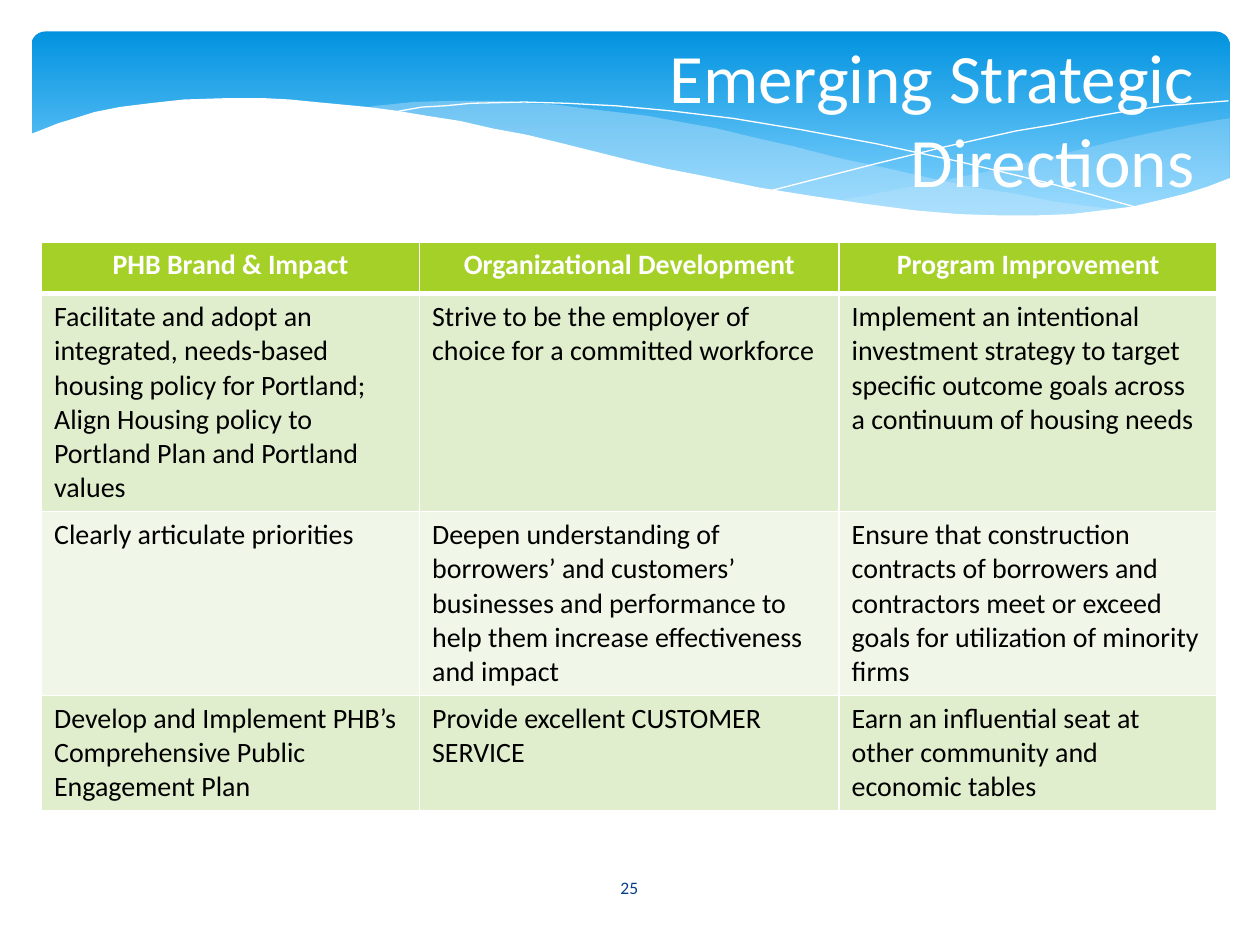
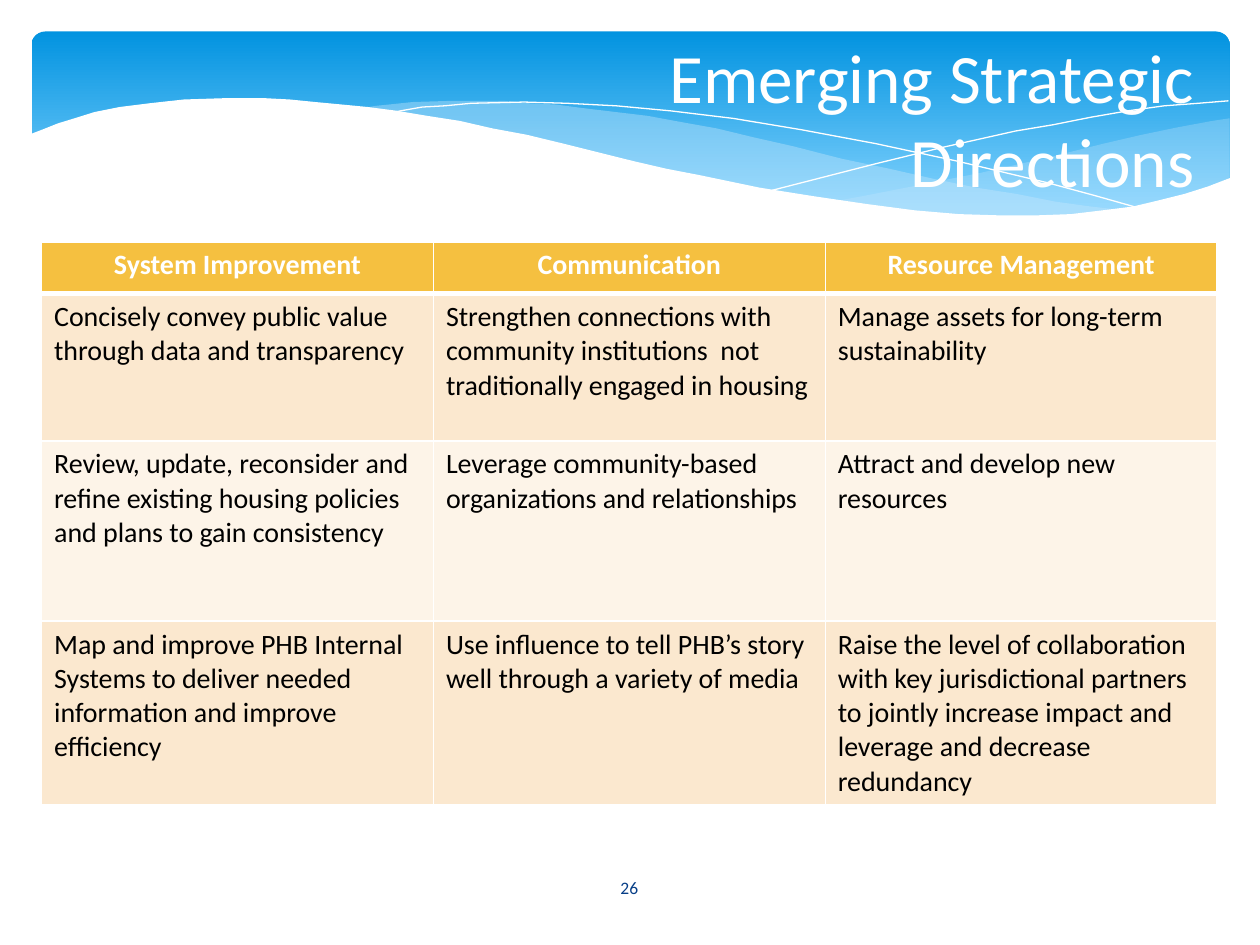
from lxml import etree
from pptx import Presentation
from pptx.dml.color import RGBColor
from pptx.enum import shapes, text
from pptx.oxml.ns import qn
from pptx.util import Inches, Pt

FONT = "Calibri"
TITLE = "Emerging Strategic Directions"
COLORS = {
    "white": "FFFFFF",
    "black": "000000",
    "band_top": "0293E0",
    "band_bottom": "83D3FE",
    "ripple": "C6E7FC",
    "number": "073E87",
}
GREEN = {"header": "A5D028", "odd": "E1EECD", "even": "F0F7E8"}
AMBER = {"header": "F5C040", "odd": "FBE8CF", "even": "FDF4E8"}

# Outlines of the header band, in hundredths of an inch
RIGHT_RIPPLE = [
    (975, 94), (962, 96), (935, 101), (906, 107), (876, 114), (832, 125),
    (779, 137), (729, 147), (683, 156), (661, 160), (691, 164), (718, 167),
    (745, 169), (769, 171), (792, 172), (835, 172), (863, 170), (889, 166),
    (913, 162), (935, 156), (949, 152), (963, 147), (976, 141), (976, 94),
]
LONG_RIPPLE = [
    (893, 167), (866, 164), (837, 160), (807, 154), (775, 149), (741, 142),
    (706, 134), (668, 126), (629, 116), (598, 109), (569, 102), (541, 97),
    (514, 92), (489, 89), (464, 86), (441, 83), (420, 82), (399, 80),
    (361, 80), (328, 81), (299, 84), (286, 86), (323, 90), (362, 97),
    (404, 106), (449, 116), (491, 126), (530, 135), (566, 143), (601, 150),
    (634, 156), (665, 161), (695, 165), (722, 168), (748, 170), (773, 172),
    (796, 173), (828, 173), (857, 171), (876, 169),
]
FALLING_LINE = [
    (309, 90), (318, 88), (335, 85), (353, 84), (374, 82), (416, 81),
    (450, 82), (489, 84), (532, 88), (582, 94), (636, 103), (695, 114),
    (760, 128), (831, 145), (868, 155), (907, 166),
]
RISING_LINE = [
    (613, 151), (652, 141), (695, 130), (748, 117), (806, 104), (836, 99),
    (866, 93), (895, 88), (924, 84), (951, 82), (975, 80),
]
WHITE_WAVE = [
    (977, 141), (959, 148), (940, 154), (920, 159), (899, 164), (875, 167),
    (850, 170), (823, 171), (793, 171), (761, 170), (726, 167), (688, 162),
    (647, 156), (603, 149), (579, 144), (555, 139), (529, 134), (503, 128),
    (475, 121), (447, 114), (418, 107), (391, 102), (365, 96), (339, 92),
    (315, 88), (292, 85), (271, 83), (250, 81), (230, 79), (211, 78),
    (177, 78), (146, 79), (119, 82), (95, 85), (75, 89), (59, 94),
    (46, 98), (36, 102), (23, 107), (23, 224), (977, 224),
]

STRATEGY = [
    ["PHB Brand & Impact", "Organizational Development", "Program Improvement"],
    ["Facilitate and adopt an integrated, needs-based housing policy for Portland; "
     "Align Housing policy to Portland Plan and Portland values",
     "Strive to be the employer of choice for a committed workforce",
     "Implement an intentional investment strategy to target specific outcome goals "
     "across a continuum of housing needs"],
    ["Clearly articulate priorities",
     "Deepen understanding of borrowers’ and customers’ businesses and performance "
     "to help them increase effectiveness and impact",
     "Ensure that construction contracts of borrowers and contractors meet or exceed "
     "goals for utilization of minority firms"],
    ["Develop and Implement PHB’s Comprehensive Public Engagement Plan",
     "Provide excellent CUSTOMER SERVICE",
     "Earn an influential seat at other community and economic tables"],
]
OPERATIONS = [
    ["System Improvement", "Communication", "Resource Management"],
    ["Concisely convey public value through data and transparency",
     "Strengthen connections with community institutions  not traditionally engaged "
     "in housing",
     "Manage assets for long-term sustainability"],
    ["Review, update, reconsider and refine existing housing policies and plans to "
     "gain consistency",
     "Leverage community-based organizations and relationships",
     "Attract and develop new resources"],
    ["Map and improve PHB Internal Systems to deliver needed information and improve "
     "efficiency",
     "Use influence to tell PHB’s story well through a variety of media",
     "Raise the level of collaboration with key jurisdictional partners to jointly "
     "increase impact and leverage and decrease redundancy"],
]


def rgb(name):
    return RGBColor.from_string(COLORS[name])


def write(frame, words, size, color, align, bold=False):
    frame.text = words
    frame.word_wrap = True
    paragraph = frame.paragraphs[0]
    paragraph.alignment = align
    font = paragraph.runs[0].font
    font.name, font.size, font.bold = FONT, Pt(size), bold
    font.color.rgb = rgb(color)


def add_outline(slide, points, closed):
    builder = slide.shapes.build_freeform(*points[0], scale=Inches(0.01))
    builder.add_line_segments(points[1:], close=closed)
    outline = builder.convert_to_shape()
    outline.shadow.inherit = False
    return outline


def add_area(slide, points, color, opacity=100):
    area = add_outline(slide, points, True)
    area.line.fill.background()
    area.fill.solid()
    area.fill.fore_color.rgb = rgb(color)
    if opacity < 100:
        tint = area.element.spPr.find(qn("a:solidFill")).find(qn("a:srgbClr"))
        etree.SubElement(tint, qn("a:alpha"), val=str(opacity * 1000))


def add_hairline(slide, points):
    hairline = add_outline(slide, points, False)
    hairline.fill.background()
    hairline.line.color.rgb = rgb("white")
    hairline.line.width = 0


def add_header_band(slide):
    band = slide.shapes.add_shape(
        shapes.MSO_SHAPE.ROUNDED_RECTANGLE,
        Inches(0.25), Inches(0.25), Inches(9.51), Inches(1.56))
    band.adjustments[0] = 0.07
    band.shadow.inherit = False
    band.line.fill.background()
    band.fill.gradient()
    band.fill.gradient_angle = 270
    stops = zip(band.fill.gradient_stops, ("band_top", "band_bottom"), (0, 0.9))
    for stop, color, position in stops:
        stop.color.rgb = rgb(color)
        stop.position = position

    add_area(slide, RIGHT_RIPPLE, "ripple", 29)
    add_area(slide, LONG_RIPPLE, "ripple", 40)
    add_hairline(slide, FALLING_LINE)
    add_hairline(slide, RISING_LINE)
    add_area(slide, WHITE_WAVE, "white")


def set_title(slide):
    title = slide.shapes.title
    title.left, title.top = Inches(4.33), Inches(0.25)
    title.width, title.height = Inches(5.25), Inches(1.37)
    write(title.text_frame, TITLE, 39.6, "white", text.PP_ALIGN.RIGHT)
    title.text_frame.auto_size = text.MSO_AUTO_SIZE.NONE
    title.text_frame.vertical_anchor = text.MSO_ANCHOR.MIDDLE
    slide.shapes.element.append(title.element)  # bring in front of the band


def add_page_number(slide, number):
    page = slide.shapes.add_textbox(
        Inches(4.36), Inches(6.84), Inches(1.27), Inches(0.4))
    write(page.text_frame, str(number), 10, "number", text.PP_ALIGN.CENTER)
    page.text_frame.vertical_anchor = text.MSO_ANCHOR.MIDDLE


def set_borders(cell, top, bottom):
    widths = {"a:lnL": 1, "a:lnR": 1, "a:lnT": top, "a:lnB": bottom}
    properties = cell._tc.get_or_add_tcPr()
    for side, width in widths.items():
        border = etree.SubElement(properties, qn(side), w=str(Pt(width)))
        fill = etree.SubElement(border, qn("a:solidFill"))
        etree.SubElement(fill, qn("a:srgbClr"), val=COLORS["white"])


def add_directions_table(slide, rows, widths, heights, palette):
    table = slide.shapes.add_table(
        len(rows), len(widths), Inches(0.33), Inches(1.92),
        Inches(sum(widths)), Inches(sum(heights))).table
    for column, width in zip(table.columns, widths):
        column.width = Inches(width)
    for r, (entries, height) in enumerate(zip(rows, heights)):
        table.rows[r].height = Inches(height)
        shade = "header" if r == 0 else "odd" if r % 2 else "even"
        for c, words in enumerate(entries):
            cell = table.cell(r, c)
            set_borders(cell, top=3 if r == 1 else 1, bottom=3 if r == 0 else 1)
            cell.fill.solid()
            cell.fill.fore_color.rgb = RGBColor.from_string(palette[shade])
            if r == 0:
                write(cell.text_frame, words, 16, "white", text.PP_ALIGN.CENTER, True)
            else:
                write(cell.text_frame, words, 16, "black", text.PP_ALIGN.LEFT)


def add_directions_slide(deck, number, rows, widths, heights, palette):
    slide = deck.slides.add_slide(deck.slide_layouts[5])
    add_header_band(slide)
    add_page_number(slide, number)
    set_title(slide)
    add_directions_table(slide, rows, widths, heights, palette)


def main():
    deck = Presentation()
    deck.slide_width, deck.slide_height = Inches(10), Inches(7.5)
    add_directions_slide(
        deck, 25, STRATEGY, [3, 3.33, 3], [0.41, 1.7, 1.43, 0.9], GREEN)
    add_directions_slide(
        deck, 26, OPERATIONS, [3.11] * 3, [0.41, 1.17, 1.43, 1.43], AMBER)
    deck.save("out.pptx")


if __name__ == "__main__":
    main()
